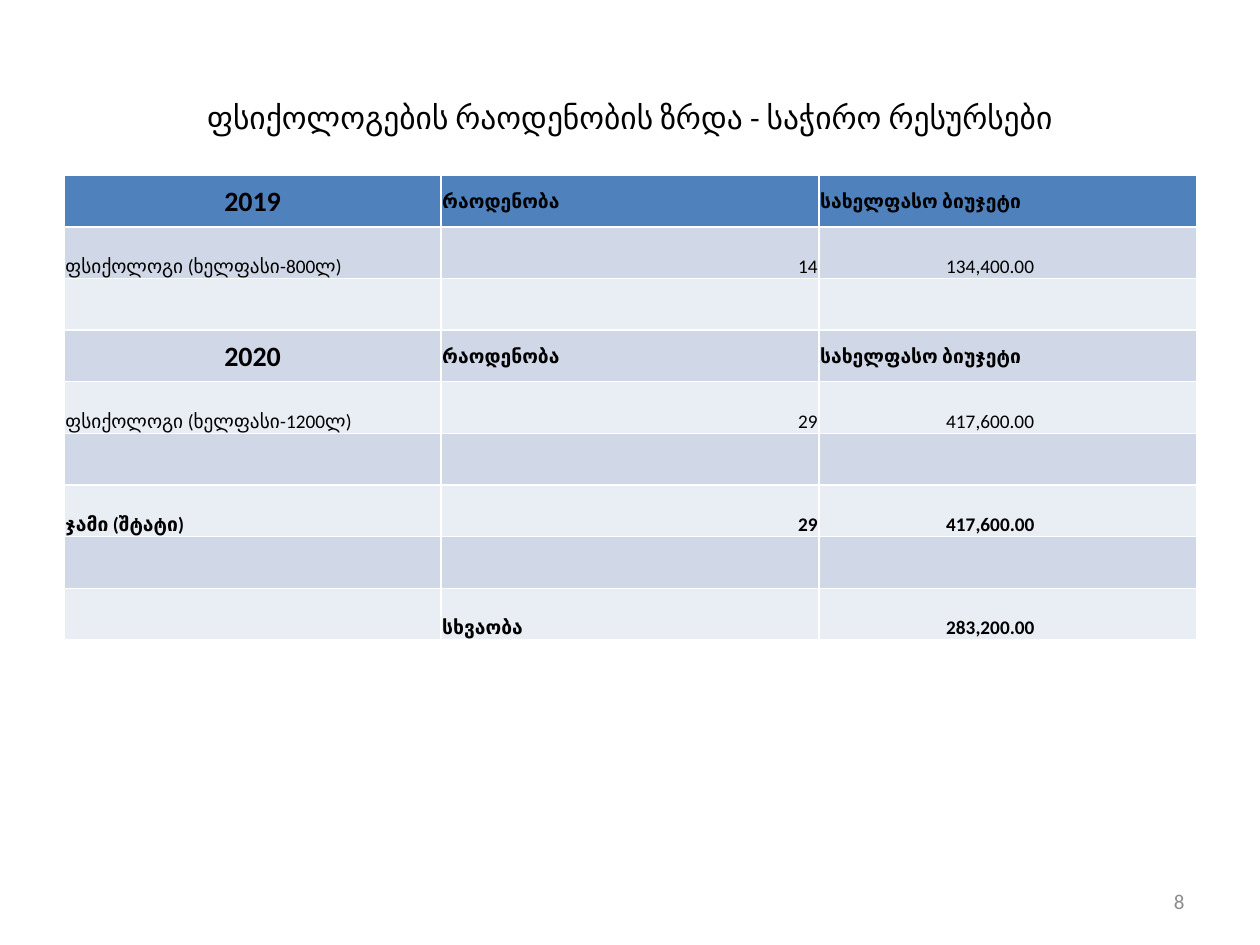
from pptx import Presentation
from pptx.dml.color import RGBColor
from pptx.enum.text import MSO_ANCHOR as Anchor, PP_ALIGN as Align
from pptx.util import Inches, Pt

HEADER, DARK_BAND, LIGHT_BAND = "4F81BD", "D0D8E8", "E9EDF4"
COUNT, BUDGET = "რაოდენობა", "სახელფასო ბიუჯეტი"
ROWS = [
    ("2019", COUNT, BUDGET),
    ("ფსიქოლოგი (ხელფასი-800ლ)", "14", "134,400.00"),
    ("", "", ""),
    ("2020", COUNT, BUDGET),
    ("ფსიქოლოგი (ხელფასი-1200ლ)", "29", "417,600.00"),
    ("", "", ""),
    ("ჯამი (შტატი)", "29", "417,600.00"),
    ("", "", ""),
    ("", "სხვაობა", "283,200.00"),
]
YEAR_ROWS = (0, 3)
PLAIN_ROWS = (1, 4)


def color(value):
    return RGBColor.from_string(value)


def write(frame, text, size=11, bold=False, ink="000000", align=Align.LEFT, font="Calibri"):
    paragraph = frame.paragraphs[0]
    paragraph.alignment = align
    run = paragraph.add_run()
    run.text = text
    run.font.name = font
    run.font.size = Pt(size)
    run.font.bold = bold
    run.font.color.rgb = color(ink)


class SlideBuilder:
    def __init__(self, slide, font="Calibri"):
        self.slide = slide
        self.font = font

    def text(self, text, left, top, width, height, **style):
        shape = self.slide.shapes.add_textbox(
            Inches(left), Inches(top), Inches(width), Inches(height))
        frame = shape.text_frame
        frame.word_wrap = True
        frame.vertical_anchor = Anchor.MIDDLE
        write(frame, text, font=self.font, **style)

    def cell(self, cell, text, row, column):
        is_year = row in YEAR_ROWS
        is_number = text[:1].isdigit() and not is_year
        band = DARK_BAND if row % 2 else LIGHT_BAND
        if row == YEAR_ROWS[1]:
            band = DARK_BAND
        cell.fill.solid()
        cell.fill.fore_color.rgb = color(band if row else HEADER)
        if not text:
            return
        cell.margin_left = Inches(1.01 if is_number and column == 2 else 0.01)
        cell.margin_top = cell.margin_right = Inches(0.01)
        cell.margin_bottom = 0
        cell.vertical_anchor = Anchor.MIDDLE if is_year else Anchor.BOTTOM
        align = Align.LEFT
        if is_year and column == 0:
            align = Align.CENTER
        elif is_number and column == 1:
            align = Align.RIGHT
        write(cell.text_frame, text, size=16 if is_year and column == 0 else 11,
              bold=row not in PLAIN_ROWS, align=align, font=self.font)

    def table(self, rows, left, top, widths, row_height):
        table = self.slide.shapes.add_table(
            len(rows), len(widths), Inches(left), Inches(top),
            Inches(sum(widths)), Inches(row_height * len(rows))).table
        for column, width in zip(table.columns, widths):
            column.width = Inches(width)
        for row, values in enumerate(rows):
            for column, text in enumerate(values):
                self.cell(table.cell(row, column), text, row, column)


def main():
    presentation = Presentation()
    presentation.slide_width = Inches(10)
    presentation.slide_height = Inches(7.5)
    slide = presentation.slides.add_slide(presentation.slide_layouts[6])
    builder = SlideBuilder(slide)
    builder.text("ფსიქოლოგების რაოდენობის ზრდა - საჭირო რესურსები",
                 0.5, 0.3, 9, 1.25, size=18, align=Align.CENTER)
    builder.text("8", 7.17, 6.95, 2.33, 0.4, size=12, ink="8C8C8C", align=Align.RIGHT)
    builder.table(ROWS, 0.51, 1.39, (2.99, 3, 3), 0.41)
    presentation.save("out.pptx")


if __name__ == "__main__":
    main()
